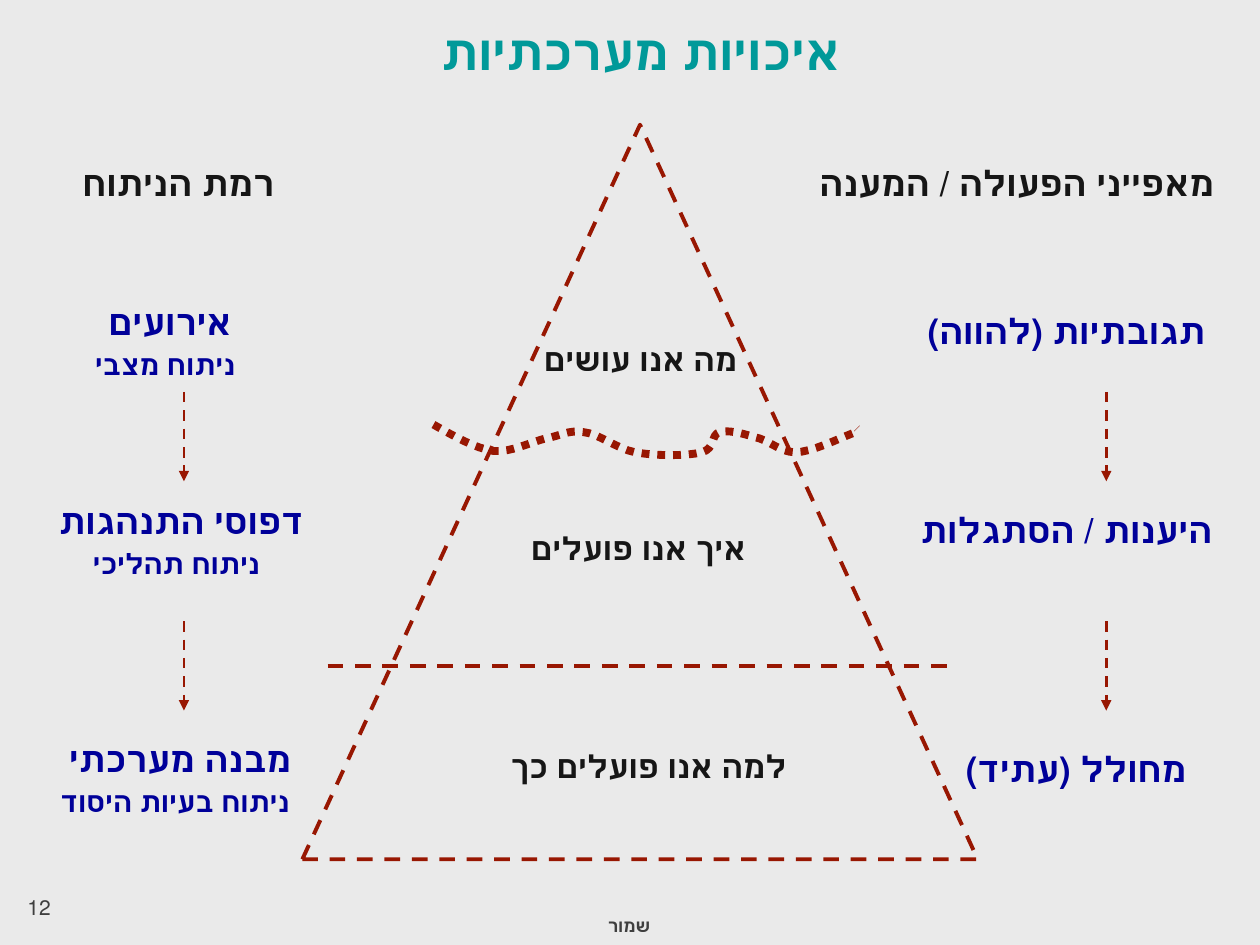
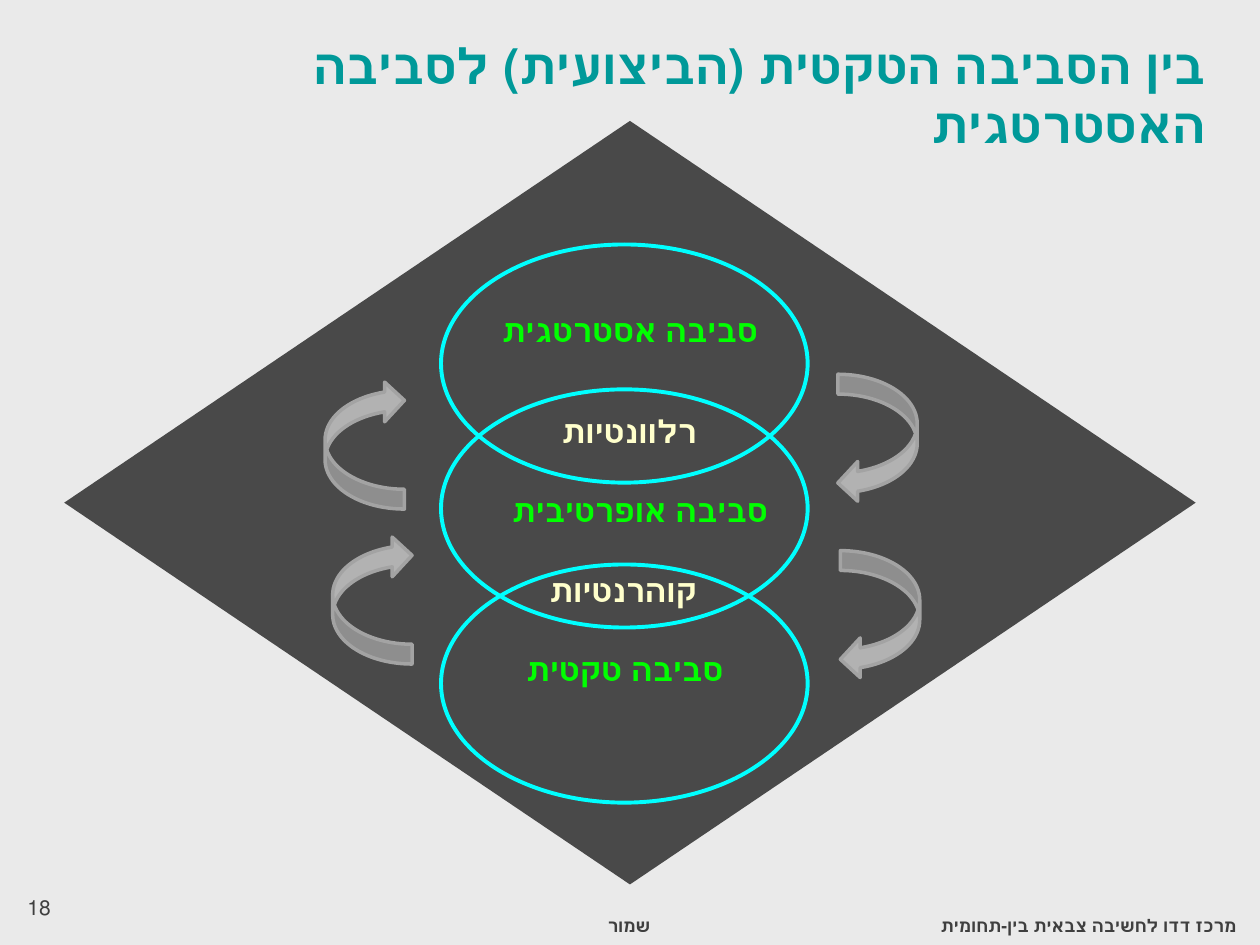
import pptx
import pptx.util
import pptx.dml.color
import pptx.enum.dml
import pptx.enum.shapes
import pptx.enum.text
import pptx.oxml
import pptx.oxml.ns

SHAPE = pptx.enum.shapes.MSO_SHAPE
DASH = pptx.enum.dml.MSO_LINE
ALIGN = pptx.enum.text.PP_ALIGN

WIDTH, HEIGHT = 10, 7.5
COLUMNS = 100
UNIT = pptx.util.Inches(WIDTH) / COLUMNS

THEME = {
    "font": "Calibri",
    "background": "EAEAEA",
    "text": {
        "title": {"size": 28, "color": "009999", "bold": True},
        "heading": {"size": 20, "color": "161616", "bold": True},
        "level": {"size": 20, "color": "000099", "bold": True},
        "method": {"size": 16, "color": "000099", "bold": True},
        "question": {"size": 18, "color": "161616", "bold": True},
        "environment": {"size": 18, "color": "00FF00", "bold": True},
        "overlap": {"size": 18, "color": "FFFFCC", "bold": True},
        "footer": {"size": 10, "color": "3F3F3F", "bold": True},
        "number": {"size": 12, "color": "3F3F3F", "bold": False},
    },
    "line": {
        "pyramid": {"color": "981702", "width": 2.25, "dash_style": DASH.DASH},
        "step": {"color": "981702", "width": 1.5, "dash_style": DASH.DASH},
        "water": {"color": "981702", "width": 4.5, "dash_style": DASH.ROUND_DOT},
        "ring": {"color": "00FFFF", "width": 2.25},
        "cycle": {"color": "A3A3A3", "width": 2},
    },
    "fill": {"diamond": "494949", "cycle": "B2B2B2"},
}

CONFIDENTIAL = "שמור"
CENTER_NAME = "מרכז דדו לחשיבה צבאית בין-תחומית"

PYRAMID = {
    "number": "12",
    "title": "איכויות מערכתיות",
    "headings": [
        ("רמת הניתוח", (4.3, 12.3, 19.7, 4.3)),
        ("מאפייני הפעולה / המענה", (61.4, 12.3, 38.6, 4.3)),
    ],
    "levels": [
        {"top": 24.1, "level": "אירועים", "method": "ניתוח מצבי", "center": 13.1,
         "response": "תגובתיות (להווה)", "response_center": 84.65,
         "question": "מה אנו עושים", "question_top": 26.5, "question_right": 59.5},
        {"top": 39.9, "level": "דפוסי התנהגות", "method": "ניתוח תהליכי", "center": 14,
         "response": "היענות / הסתגלות", "response_center": 84.65,
         "question": "איך אנו פועלים", "question_top": 41.5, "question_right": 60.2},
        {"top": 58.8, "level": "מבנה מערכתי", "method": "ניתוח בעיות היסוד", "center": 13.9,
         "response": "מחולל (עתיד)", "response_center": 85.4,
         "question": "למה אנו פועלים כך", "question_top": 58.8, "question_right": 63.4},
    ],
    "step_columns": (14.6, 87.8),
    "step_tops": (31.1, 49.3),
    "step_length": 7.1,
    "triangle": (24, 9.9, 53.6, 58.3),
    "base_line": (26, 52.85, 75.6, 52.85),
    "water_start": (34.4, 33.7),
    "water_curves": [
        ((36, 34.6), (37.7, 35.6), (39.2, 35.8)),
        ((40.6, 35.9), (42.1, 35.1), (43.3, 34.8)),
        ((44.5, 34.6), (45.1, 34.1), (46.3, 34.3)),
        ((47.5, 34.4), (48.9, 35.6), (50.4, 35.9)),
        ((52, 36.2), (54.6, 36.2), (55.7, 35.9)),
        ((56.8, 35.6), (56.4, 34.5), (57.1, 34.3)),
        ((57.8, 34.1), (58.9, 34.4), (59.9, 34.7)),
        ((61, 34.9), (61.9, 35.9), (63.1, 35.9)),
        ((64.4, 35.9), (66.6, 34.8), (67.4, 34.5)),
        ((68.2, 34.2), (68.1, 34.1), (68, 34)),
    ],
}

ENVIRONMENTS = {
    "number": "18",
    "title": "בין הסביבה הטקטית (הביצועית) לסביבה האסטרטגית",
    "diamond": (5.1, 9.6, 89.8, 60.6),
    "ring_tops": (19.4, 44.8, 30.9),
    "ring": (35, 29.1, 18.9),
    "environments": [
        ("סביבה אסטרטגית", 50, 24.2),
        ("סביבה אופרטיבית", 50.8, 38.5),
        ("סביבה טקטית", 49.6, 51.1),
    ],
    "overlaps": [("רלוונטיות", 32.2), ("קוהרנטיות", 44.8)],
    "cycles": [(66.5, 29.7, 0), (66.7, 43.7, 0), (25.8, 30.2, 180), (26.4, 42.5, 180)],
    "cycle_size": (6.3, 10.2),
}


def emu(*lengths):
    return [round(v * UNIT) for v in lengths]


def rgb(color):
    return pptx.dml.color.RGBColor.from_string(color)


def apply(target, values):
    for name, value in values.items():
        if name == "color":
            target.color.rgb = rgb(value)
        elif name in ("size", "width"):
            setattr(target, name, pptx.util.Pt(value))
        else:
            setattr(target, name, value)


def add_text(s, box, lines, align=ALIGN.CENTER, spacing=None):
    tf = s.shapes.add_textbox(*emu(*box)).text_frame
    tf.word_wrap = True
    for i, (text, style) in enumerate(lines):
        p = tf.paragraphs[0] if i == 0 else tf.add_paragraph()
        apply(p, {"alignment": align, "line_spacing": spacing})
        if i:
            p.space_before = pptx.util.Pt(8)
        p._p.get_or_add_pPr().set("rtl", "1")
        r = p.add_run()
        r.text = text
        apply(r.font, {"name": THEME["font"], **THEME["text"][style]})


def paint(sp, line=None, fill=None):
    sp.shadow.inherit = False
    if fill:
        sp.fill.solid()
        sp.fill.fore_color.rgb = rgb(THEME["fill"][fill])
    else:
        sp.fill.background()
    if line:
        apply(sp.line, THEME["line"][line])
    else:
        sp.line.fill.background()


def add_shape(s, kind, box, line=None, fill=None):
    sp = s.shapes.add_shape(kind, *emu(*box))
    paint(sp, line, fill)
    return sp


def add_line(s, ends, style, arrow=False):
    c = s.shapes.add_connector(pptx.enum.shapes.MSO_CONNECTOR.STRAIGHT, *emu(*ends))
    apply(c.line, THEME["line"][style])
    ns = pptx.oxml.ns.nsdecls("a")
    if arrow:
        c.line._get_or_add_ln().append(pptx.oxml.parse_xml(f'<a:tailEnd {ns} type="triangle"/>'))
    c._element.spPr.append(pptx.oxml.parse_xml(f"<a:effectLst {ns}/>"))


def curve_points(start, curves, steps=8):
    points = []
    for a, b, end in curves:
        for t in (i / steps for i in range(1, steps + 1)):
            u = 1 - t
            points.append(emu(*(
                u**3 * p0 + 3 * u * u * t * p1 + 3 * u * t * t * p2 + t**3 * p3
                for p0, p1, p2, p3 in zip(start, a, b, end))))
        start = end
    return points


def new_slide(prs, number):
    s = prs.slides.add_slide(prs.slide_layouts[6])
    s.background.fill.solid()
    s.background.fill.fore_color.rgb = rgb(THEME["background"])
    add_text(s, (38.9, 72.1, 13.7, 2.9), [(CONFIDENTIAL, "footer")], ALIGN.RIGHT)
    add_text(s, (1.2, 70.5, 23.3, 4), [(number, "number")], None)
    return s


def build_pyramid(prs, d):
    s = new_slide(prs, d["number"])
    add_shape(s, SHAPE.ISOSCELES_TRIANGLE, d["triangle"], "pyramid")
    add_text(s, (22.7, 1.2, 56.3, 5.7), [(d["title"], "title")])
    for text, box in d["headings"]:
        add_text(s, box, [(text, "heading")])
    for row in d["levels"]:
        half = min(row["center"], 14)
        add_text(s, (row["center"] - half, row["top"], 2 * half, 6.9),
                 [(row["level"] + " ", "level"), (row["method"], "method")], spacing=0.75)
        half = 100 - row["response_center"]
        add_text(s, (row["response_center"] - half, row["top"], 2 * half, 4.3),
                 [(row["response"], "level")])
        add_text(s, (row["question_right"] - 30, row["question_top"], 30, 4),
                 [(row["question"], "question")], ALIGN.RIGHT)
    for x in d["step_columns"]:
        for y in d["step_tops"]:
            add_line(s, (x, y, x, y + d["step_length"]), "step", arrow=True)
    add_line(s, d["base_line"], "pyramid")
    builder = s.shapes.build_freeform(*emu(*d["water_start"]))
    builder.add_line_segments(curve_points(d["water_start"], d["water_curves"]), close=False)
    paint(builder.convert_to_shape(), "water")


def build_environments(prs, d):
    s = new_slide(prs, d["number"])
    add_text(s, (20, 2.3, 76.7, 10.5), [(d["title"], "title")], ALIGN.RIGHT)
    add_shape(s, SHAPE.DIAMOND, d["diamond"], fill="diamond")
    left, width, height = d["ring"]
    for top in d["ring_tops"]:
        add_shape(s, SHAPE.OVAL, (left, top, width, height), "ring")
    for text, center, top in d["environments"]:
        add_text(s, (center - 12.5, top, 25, 4), [(text, "environment")])
    for text, top in d["overlaps"]:
        add_text(s, (42.1, top, 14.2, 4), [(text, "overlap")], ALIGN.RIGHT)
    add_text(s, (67.4, 72.1, 31.7, 2.9), [(CENTER_NAME, "footer")], ALIGN.RIGHT)
    for x, y, rotation in d["cycles"]:
        sp = add_shape(s, SHAPE.CURVED_LEFT_ARROW, (x, y, *d["cycle_size"]), "cycle", "cycle")
        sp.rotation = rotation


def main():
    prs = pptx.Presentation()
    prs.slide_width = pptx.util.Inches(WIDTH)
    prs.slide_height = pptx.util.Inches(HEIGHT)
    build_pyramid(prs, PYRAMID)
    build_environments(prs, ENVIRONMENTS)
    prs.save("out.pptx")


if __name__ == "__main__":
    main()
